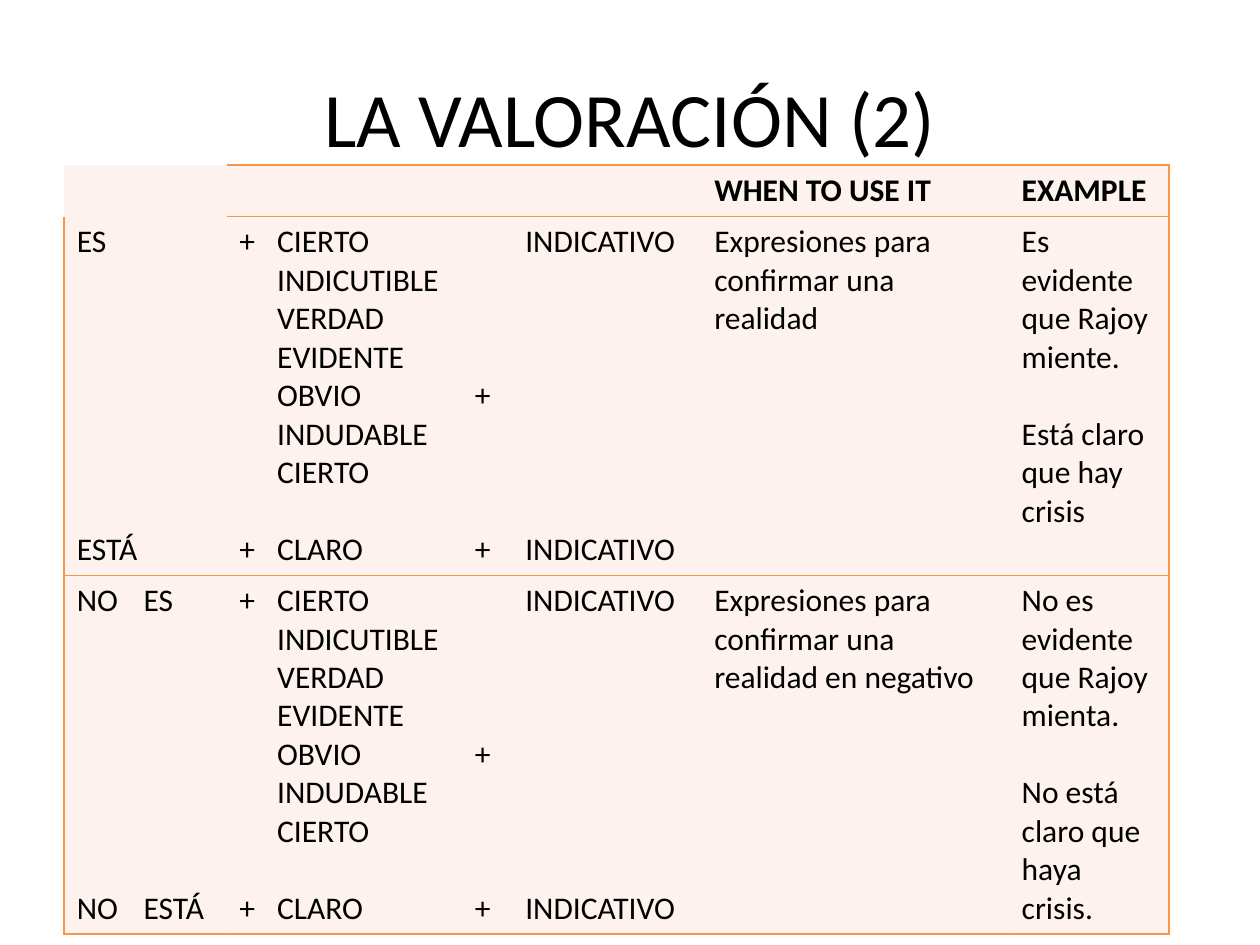
from lxml.etree import SubElement
from pptx import Presentation
from pptx.dml.color import RGBColor
from pptx.enum.text import MSO_ANCHOR, PP_ALIGN
from pptx.oxml.ns import qn
from pptx.util import Inches, Pt

LINE_HEIGHT = 21.97
TAB_STOPS = {0: 0.53, 2: 1.57}


def colour(value):
    return RGBColor.from_string(value)


class SlideBuilder:
    font_name = "Calibri"
    ink = "000000"
    fill = "FDEFE9"
    opacity = 79
    rule = "F79646"

    def __init__(self, presentation):
        self.width = presentation.slide_width
        self.height = presentation.slide_height
        self.slide = presentation.slides.add_slide(presentation.slide_layouts[5])

    def box(self, left, top, width, height):
        return (round(left * self.width), round(top * self.height),
                round(width * self.width), round(height * self.height))

    def style(self, paragraph, size, bold=False):
        for run in paragraph.runs:
            run.font.name = self.font_name
            run.font.size = Pt(size)
            run.font.bold = bold
            run.font.color.rgb = colour(self.ink)

    def title(self, text, *place):
        shape = self.slide.shapes.title
        shape.left, shape.top, shape.width, shape.height = self.box(*place)
        shape.text_frame.text = text
        shape.text_frame.vertical_anchor = MSO_ANCHOR.MIDDLE
        paragraph = shape.text_frame.paragraphs[0]
        paragraph.alignment = PP_ALIGN.CENTER
        self.style(paragraph, 44)

    def table(self, rows, widths, heights, left, top):
        place = self.box(left, top, sum(widths), sum(heights))
        table = self.slide.shapes.add_table(len(rows), len(widths), *place).table
        table.first_row = table.horz_banding = False
        for column, width in zip(table.columns, widths):
            column.width = round(width * self.width)
        for row, height in zip(table.rows, heights):
            row.height = round(height * self.height)
        for row_index, row in enumerate(rows):
            for column_index, lines in enumerate(row):
                cell = table.cell(row_index, column_index)
                self.cell_text(cell, lines, row_index == 0, TAB_STOPS.get(column_index))
                self.cell_fill(cell)
                self.cell_borders(cell, self.ruled_sides(row_index, column_index, len(widths)))

    def ruled_sides(self, row, column, column_count):
        if (row, column) == (0, 0):
            return ""
        sides = "B" if (row, column) == (1, 0) else "TB"
        if column == 0:
            sides += "L"
        if column == column_count - 1:
            sides += "R"
        return sides

    def cell_text(self, cell, lines, bold, tab_stop):
        for index, (text, skipped_lines) in enumerate(lines):
            text_frame = cell.text_frame
            paragraph = text_frame.add_paragraph() if index else text_frame.paragraphs[0]
            paragraph.text = text
            if "\t" in text:
                properties = paragraph._p.get_or_add_pPr()
                tabs = SubElement(properties, qn("a:tabLst"))
                SubElement(tabs, qn("a:tab"), pos=str(Inches(tab_stop)), algn="l")
            if skipped_lines:
                paragraph.space_before = Pt(skipped_lines * LINE_HEIGHT)
            self.style(paragraph, 18, bold)

    def cell_fill(self, cell):
        cell.fill.solid()
        cell.fill.fore_color.rgb = colour(self.fill)
        base = cell._tc.tcPr.find(qn("a:solidFill"))[0]
        SubElement(base, qn("a:alpha"), val=str(self.opacity * 1000))

    def cell_borders(self, cell, sides):
        properties = cell._tc.get_or_add_tcPr()
        for index, side in enumerate("LRTB"):
            line = SubElement(properties, qn(f"a:ln{side}"), w=str(Pt(1)))
            properties.insert(index, line)
            if side in sides:
                SubElement(SubElement(line, qn("a:solidFill")), qn("a:srgbClr"), val=self.rule)
            else:
                SubElement(line, qn("a:noFill"))


def verb_row(first_verb, second_verb, usage, examples):
    adjectives = ["CIERTO", "INDICUTIBLE", "VERDAD", "EVIDENTE", "OBVIO\t+", "INDUDABLE CIERTO"]
    return [
        [(first_verb, 0), (second_verb, 7)],
        [("+", 0), ("+", 7)],
        [(text, 0) for text in adjectives] + [("CLARO\t+", 1)],
        [("INDICATIVO", 0), ("INDICATIVO", 7)],
        [(usage, 0)],
        [(examples[0], 0), (examples[1], 1)],
    ]


def main():
    presentation = Presentation()
    presentation.slide_width, presentation.slide_height = Inches(10), Inches(7.5)
    builder = SlideBuilder(presentation)
    builder.title("LA VALORACIÓN (2)", 0.05, 0.04, 0.9, 1 / 6)
    rows = [
        [[], [], [], [], [("WHEN TO USE IT", 0)], [("EXAMPLE", 0)]],
        verb_row("ES", "ESTÁ", "Expresiones para confirmar una realidad",
                 ["Es evidente que Rajoy miente.", "Está claro que hay crisis"]),
        verb_row("NO\tES", "NO\tESTÁ", "Expresiones para confirmar una realidad en negativo",
                 ["No es evidente que Rajoy mienta.", "No está claro que haya crisis."]),
    ]
    widths = [0.129, 0.03, 0.197, 0.15, 0.244, 0.127]
    heights = [0.41 / 7.5, 2.84 / 7.5, 2.84 / 7.5]
    builder.table(rows, widths, heights, 0.051, 1.31 / 7.5)
    presentation.save("out.pptx")


if __name__ == "__main__":
    main()
